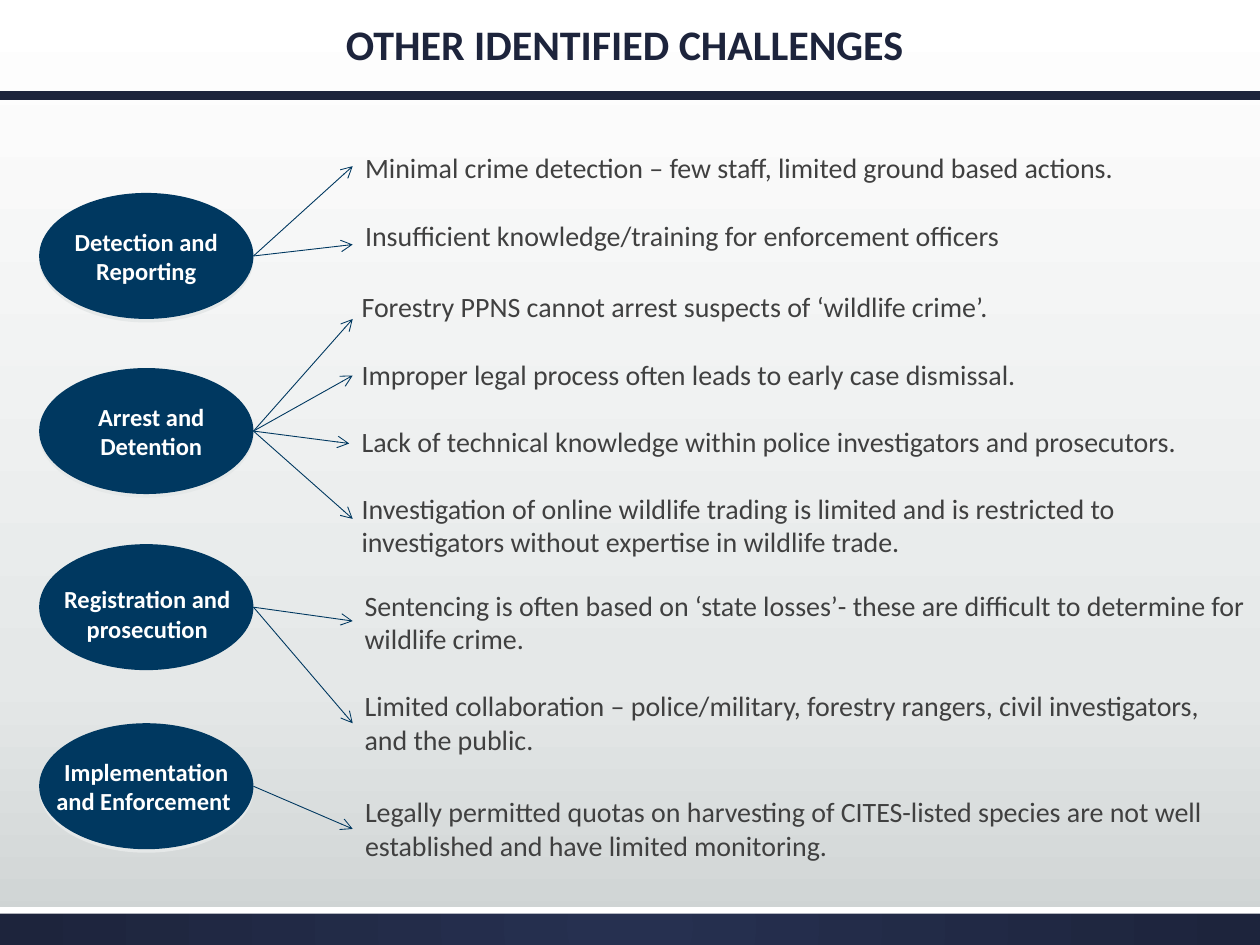
import pptx
import pptx.dml.color
import pptx.enum.shapes
import pptx.enum.text
import pptx.oxml
import pptx.oxml.ns
import pptx.util

Cm, Pt = pptx.util.Cm, pptx.util.Pt
RGBColor = pptx.dml.color.RGBColor
Shape = pptx.enum.shapes.MSO_SHAPE
Align, Anchor = pptx.enum.text.PP_ALIGN, pptx.enum.text.MSO_ANCHOR

NAVY = RGBColor(0x1D, 0x24, 0x3C)
INDIGO = RGBColor(0x26, 0x30, 0x50)
BLUE = RGBColor(0x00, 0x38, 0x60)
GREY = RGBColor(0x40, 0x40, 0x40)
MIST = RGBColor(0xE5, 0xE8, 0xE8)
SILVER = RGBColor(0xCD, 0xD2, 0xD2)
WHITE = RGBColor(0xFF, 0xFF, 0xFF)

WIDTH, HEIGHT = 25.4, 19.05
OVAL_LEFT, OVAL_WIDTH, OVAL_HEIGHT = 0.79, 4.32, 2.54
LABEL_WIDTH, LABEL_HEIGHT = 3.96, 2.34

# Each stage: oval top, label and its position, findings and their box, arrow tips
STAGES = [
    {"top": 3.89, "label": "Detection and Reporting", "label_at": (0.97, 3.99),
     "box": (7.11, 2.92, 16.41, 3),
     "findings": ["Minimal crime detection – few staff, limited ground based actions.",
                  "Insufficient knowledge/training for enforcement officers"],
     "tips": [(7.11, 3.35), (7.11, 4.93)]},
    {"top": 7.42, "label": "Arrest and Detention", "label_at": (1.07, 7.52),
     "box": (7.04, 5.72, 18.06, 6.4),
     "findings": ["Forestry PPNS cannot arrest suspects of ‘wildlife crime’.",
                  "Improper legal process often leads to early case dismissal.",
                  "Lack of technical knowledge within police investigators and prosecutors.",
                  "Investigation of online wildlife trading is limited and is restricted to "
                  "investigators without expertise in wildlife trade."],
     "tips": [(7.11, 6.43), (7.11, 7.57), (7.04, 8.94), (7.11, 10.46)]},
    {"top": 10.97, "label": "Registration and prosecution", "label_at": (0.99, 11.2),
     "box": (7.1, 11.73, 18.3, 3.68),
     "findings": ["Sentencing is often based on ‘state losses’- these are difficult to "
                  "determine for wildlife crime.",
                  "Limited collaboration – police/military, forestry rangers, civil "
                  "investigators, and the public."],
     "tips": [(7.11, 12.52), (7.11, 14.58)]},
    {"top": 14.58, "label": "Implementation and Enforcement ", "label_at": (0.97, 14.68),
     "box": (7.11, 15.9, 18.01, 1.63),
     "findings": ["Legally permitted quotas on harvesting of CITES-listed species are not "
                  "well established and have limited monitoring."],
     "tips": [(7.11, 16.71)]},
]


def add_xml(parent, xml):
    """Append a DrawingML fragment to an element and return it."""
    namespace = pptx.oxml.ns.nsdecls("a")
    child = pptx.oxml.parse_xml(xml.replace(" ", f" {namespace} ", 1))
    parent.append(child)
    return child


class SlideBuilder:
    title_style = {"size": Pt(24), "bold": True, "name": "Calibri"}
    label_style = {"size": Pt(14), "bold": True, "name": "Calibri"}
    finding_style = {"size": Pt(16), "name": "Calibri"}
    paragraph_gap = Pt(19.2)

    def __init__(self, presentation):
        self.slide = presentation.slides.add_slide(presentation.slide_layouts[5])

    def gradient(self, fill, element, stops, direction):
        fill.gradient()
        gradient = element.xpath(".//a:gradFill")[0]
        for child in list(gradient):
            gradient.remove(child)
        stop_list = add_xml(gradient, "<a:gsLst />")
        for position, color in stops:
            add_xml(stop_list, f'<a:gs pos="{position * 1000}">'
                               f'<a:srgbClr val="{color}"/></a:gs>')
        add_xml(gradient, direction)

    def background(self, stops):
        self.gradient(self.slide.background.fill, self.slide.element, stops,
                      '<a:lin ang="5400000" scaled="0"/>')

    def set_text(self, frame, texts, style, color, alignment, anchor, margins=None):
        frame.word_wrap = True
        frame.auto_size = pptx.enum.text.MSO_AUTO_SIZE.NONE
        frame.vertical_anchor = anchor
        for side, margin in (margins or {}).items():
            setattr(frame, f"margin_{side}", margin)
        for index, text in enumerate(texts):
            paragraph = frame.add_paragraph() if index else frame.paragraphs[0]
            paragraph.text = text
            paragraph.alignment = alignment
            if index:
                paragraph.space_before = self.paragraph_gap
            for name, value in style.items():
                setattr(paragraph.font, name, value)
            paragraph.font.color.rgb = color

    def title(self, text, box):
        title = self.slide.shapes.title
        for name, value in zip(("left", "top", "width", "height"), box):
            setattr(title, name, Cm(value))
        self.set_text(title.text_frame, [text], self.title_style, NAVY,
                      Align.CENTER, Anchor.BOTTOM)

    def shape(self, kind, box, color):
        shape = self.slide.shapes.add_shape(kind, *map(Cm, box))
        shape.shadow.inherit = False
        shape.fill.solid()
        shape.fill.fore_color.rgb = color
        shape.line.fill.background()
        return shape

    def oval(self, box):
        oval = self.shape(Shape.OVAL, box, BLUE)
        effects = oval.element.spPr.find(pptx.oxml.ns.qn("a:effectLst"))
        add_xml(effects, f'<a:outerShdw blurRad="0" dist="{Pt(2)}" dir="5400000" '
                         f'rotWithShape="0"><a:srgbClr val="{MIST}"/></a:outerShdw>')

    def text_box(self, box):
        return self.slide.shapes.add_textbox(*map(Cm, box)).text_frame

    def label(self, text, box):
        no_margins = dict.fromkeys(("left", "top", "right", "bottom"), 0)
        self.set_text(self.text_box(box), [text], self.label_style, WHITE,
                      Align.CENTER, Anchor.MIDDLE, no_margins)

    def findings(self, texts, box):
        self.set_text(self.text_box(box), texts, self.finding_style, GREY,
                      Align.LEFT, Anchor.TOP)

    def line(self, start, end, color, weight, arrow=False):
        connector = self.slide.shapes.add_connector(
            pptx.enum.shapes.MSO_CONNECTOR.STRAIGHT, *map(Cm, (*start, *end)))
        connector.line.color.rgb = color
        connector.line.width = Pt(weight)
        properties = connector.element.spPr
        if arrow:
            outline = properties.find(pptx.oxml.ns.qn("a:ln"))
            add_xml(outline, '<a:tailEnd type="arrow"/>')
        add_xml(properties, "<a:effectLst />")


def main():
    presentation = pptx.Presentation()
    presentation.slide_width, presentation.slide_height = Cm(WIDTH), Cm(HEIGHT)
    builder = SlideBuilder(presentation)

    # Background, footer band and header rule
    builder.background([(0, WHITE), (72, MIST), (100, SILVER)])
    footer = builder.shape(Shape.RECTANGLE, (0, 18.29, WIDTH, 0.76), NAVY)
    builder.gradient(footer.fill, footer.element, [(0, INDIGO), (100, NAVY)],
                     '<a:path path="circle"><a:fillToRect l="50000" t="50000" '
                     'r="50000" b="50000"/></a:path>')
    builder.shape(Shape.RECTANGLE, (0, 18.29, WIDTH, 0.13), WHITE)
    builder.line((0, 1.93), (WIDTH, 1.93), NAVY, 5)
    builder.title("OTHER IDENTIFIED CHALLENGES ", (0.84, 0.38, 23.7, 1.14))

    # Stages with their findings
    for stage in STAGES:
        builder.findings(stage["findings"], stage["box"])
        builder.oval((OVAL_LEFT, stage["top"], OVAL_WIDTH, OVAL_HEIGHT))
        builder.label(stage["label"], (*stage["label_at"], LABEL_WIDTH, LABEL_HEIGHT))
        start = (OVAL_LEFT + OVAL_WIDTH, stage["top"] + OVAL_HEIGHT / 2)
        for tip in stage["tips"]:
            builder.line(start, tip, BLUE, 0.5, arrow=True)

    presentation.save("out.pptx")


if __name__ == "__main__":
    main()
